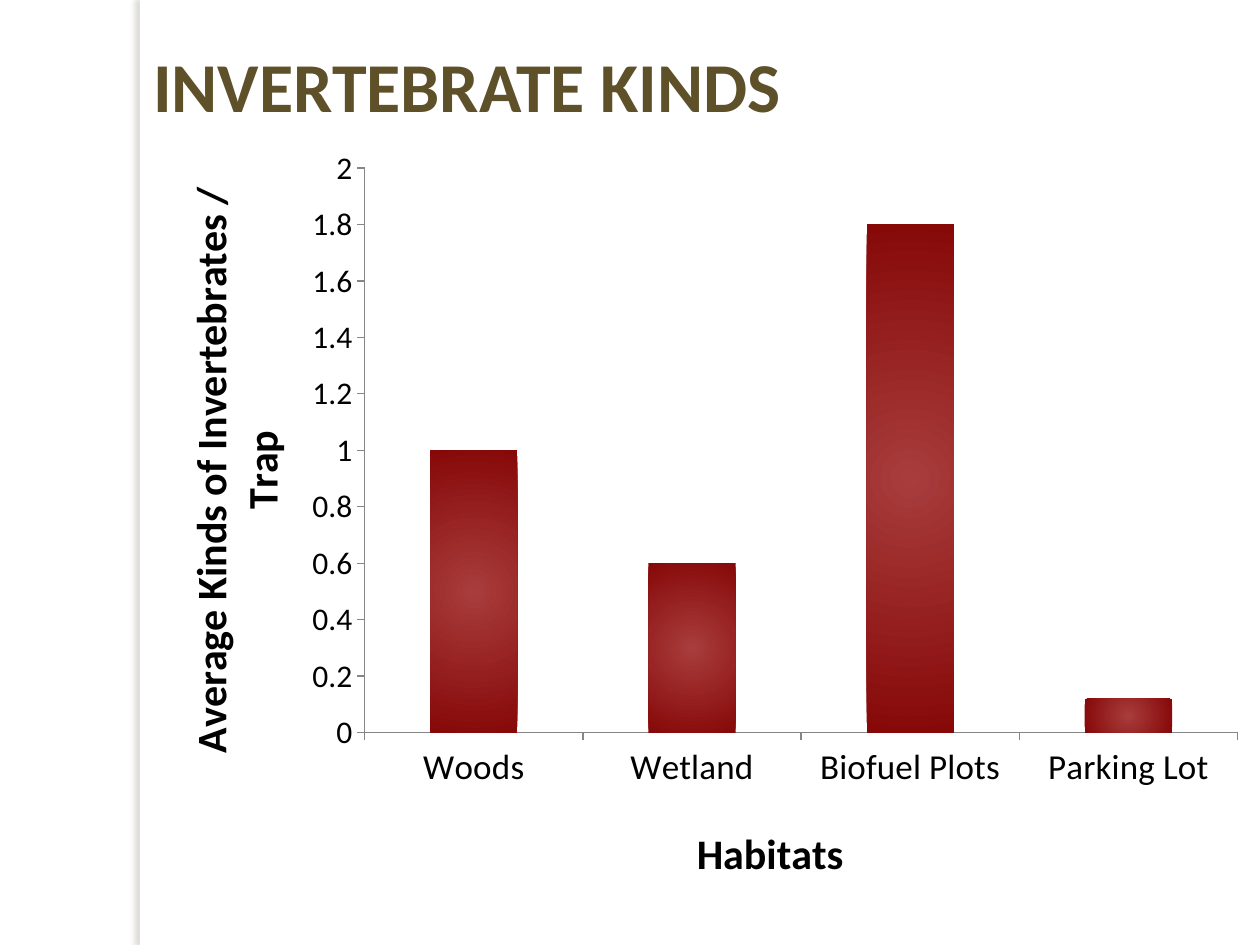
from lxml import etree
from pptx import Presentation
from pptx.chart.data import CategoryChartData
from pptx.dml.color import RGBColor
from pptx.enum.chart import XL_CHART_TYPE as ChartType, XL_TICK_MARK as Tick
from pptx.enum.shapes import MSO_SHAPE as Shape
from pptx.oxml import parse_xml
from pptx.oxml.ns import nsdecls, qn
from pptx.util import Cm, Pt

COLORS = {
    "white": "FFFFFF", "title": "5E5028", "text": "000000", "axis": "868686",
    "bar": "860908", "bar_center": "A83C3C", "shadow": "787360",
}


def rgb(name):
    return RGBColor.from_string(COLORS[name])


def style_font(font, size, color="text", bold=False, name="Calibri"):
    font.name, font.size, font.bold = name, Pt(size), bold
    font.color.rgb = rgb(color)


def write_text(tf, text, line=None, **style):
    p = tf.paragraphs[0]
    if line:
        p.line_spacing = Pt(line)
    r = p.add_run()
    r.text = text
    style_font(r.font, **style)


def set_layout(parent, index, inner=False, **parts):
    """Place a chart part by fractions of the chart: x, y and optionally w, h."""
    for old in parent.findall(qn("c:layout")):
        parent.remove(old)
    layout = etree.Element(qn("c:layout"))
    manual = etree.SubElement(layout, qn("c:manualLayout"))
    if inner:
        etree.SubElement(manual, qn("c:layoutTarget"), val="inner")
    for key in ("x", "y"):
        etree.SubElement(manual, qn(f"c:{key}Mode"), val="edge")
    for key, value in parts.items():
        etree.SubElement(manual, qn(f"c:{key}"), val=str(value))
    parent.insert(index, layout)


class SlideBuilder:
    def __init__(self, prs):
        self.s = prs.slides.add_slide(prs.slide_layouts[6])
        bg = self.s.background.fill
        bg.solid()
        bg.fore_color.rgb = rgb("white")

    def strip(self, *box):
        sp = self.s.shapes.add_shape(Shape.RECTANGLE, *map(Cm, box))
        sp.fill.solid()
        sp.fill.fore_color.rgb = rgb("white")
        sp.line.fill.background()
        sp.shadow.inherit = False
        # Soft shadow to the left
        effects = sp._element.spPr.find(qn("a:effectLst"))
        effects.append(parse_xml(
            f'<a:outerShdw {nsdecls("a")} blurRad="{Pt(3)}" dist="{Pt(3)}" '
            f'dir="10800000" algn="tl" rotWithShape="0">'
            f'<a:srgbClr val="{COLORS["shadow"]}"><a:alpha val="25000"/>'
            f'</a:srgbClr></a:outerShdw>'))

    def text(self, text, *box, **style):
        tf = self.s.shapes.add_textbox(*map(Cm, box)).text_frame
        tf.word_wrap = True
        write_text(tf, text, **style)

    def axis(self, axis, title, size, x, y):
        axis.has_major_gridlines = False
        axis.major_tick_mark = Tick.OUTSIDE
        axis.format.line.color.rgb = rgb("axis")
        axis.format.line.width = Pt(0.75)
        style_font(axis.tick_labels.font, size)
        write_text(axis.axis_title.text_frame, title, size=24, bold=True)
        set_layout(axis.axis_title._element, 1, x=x, y=y)

    def radial_fill(self, fill):
        fill.gradient()
        for stop, color in zip(fill.gradient_stops, ("bar_center", "bar")):
            stop.color.rgb = rgb(color)
        first, last = fill.gradient_stops
        first.position, last.position = 0, 1
        grad = first._gs.getparent().getparent()
        grad.replace(grad.find(qn("a:lin")), parse_xml(
            f'<a:path {nsdecls("a")} path="circle">'
            '<a:fillToRect l="50000" t="50000" r="50000" b="50000"/></a:path>'))

    def column_chart(self, values, *box):
        data = CategoryChartData()
        data.categories = list(values)
        data.add_series("Series 1", list(values.values()))
        chart = self.s.shapes.add_chart(
            ChartType.COLUMN_CLUSTERED, *map(Cm, box), data).chart
        chart.has_legend = chart.has_title = False
        style_font(chart.font, 10)
        plot = chart.plots[0]
        plot.vary_by_categories = False
        plot.gap_width = 150
        self.radial_fill(plot.series[0].format.fill)
        self.axis(chart.category_axis, "Habitats", 20, x=0.49, y=0.89)
        self.axis(chart.value_axis, "Average Kinds of Invertebrates / Trap", 18,
                  x=0.03, y=0.06)
        scale = chart.value_axis
        scale.minimum_scale, scale.maximum_scale, scale.major_unit = 0, 2, 0.2
        scale.tick_labels.number_format = "General"
        scale.tick_labels.number_format_is_linked = False
        set_layout(chart._chartSpace.chart.plotArea, 0, inner=True,
                   x=0.2, y=0.045, w=0.78, h=0.735)


def main():
    prs = Presentation()
    prs.slide_width, prs.slide_height = Cm(25.4), Cm(19.05)
    slide = SlideBuilder(prs)

    # Edge strip
    slide.strip(2.82, 0, 0.2, 19.05)

    # Heading
    slide.text("INVERTEBRATE KINDS", 2.84, 0.84, 22.56, 6.35,
               line=45, size=40, color="title", bold=True)

    # Average kinds per habitat
    kinds = {"Woods": 1, "Wetland": 0.6, "Biofuel Plots": 1.8, "Parking Lot": 0.12}
    slide.column_chart(kinds, 2.84, 2.69, 22.56, 15.49)

    prs.save("out.pptx")


if __name__ == "__main__":
    main()
